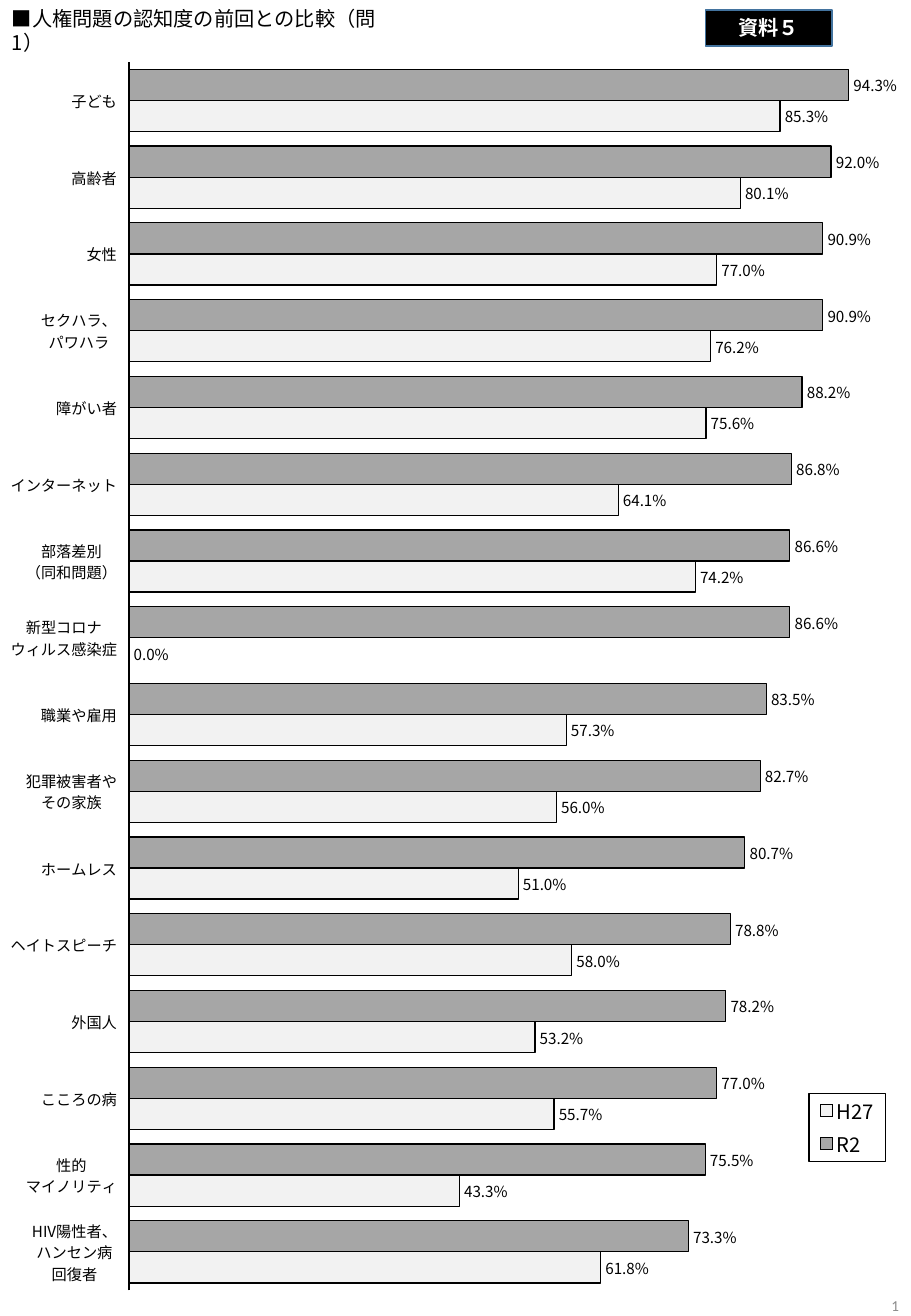
from lxml import etree
from pptx import Presentation
from pptx.chart.data import CategoryChartData
from pptx.dml.color import RGBColor
from pptx.enum.chart import XL_CHART_TYPE, XL_LABEL_POSITION, XL_LEGEND_POSITION, XL_TICK_LABEL_POSITION, XL_TICK_MARK
from pptx.enum.shapes import MSO_SHAPE
from pptx.enum.text import MSO_ANCHOR, PP_ALIGN
from pptx.oxml import parse_xml
from pptx.oxml.ns import nsdecls, qn
from pptx.util import Inches, Pt

BAR = XL_CHART_TYPE.BAR_CLUSTERED
OUTSIDE_END = XL_LABEL_POSITION.OUTSIDE_END
LEGEND_RIGHT = XL_LEGEND_POSITION.RIGHT
LABELS_LOW = XL_TICK_LABEL_POSITION.LOW
NO_TICKS = XL_TICK_MARK.NONE
RECTANGLE = MSO_SHAPE.RECTANGLE
TOP, MIDDLE = MSO_ANCHOR.TOP, MSO_ANCHOR.MIDDLE
LEFT, CENTER, RIGHT = PP_ALIGN.LEFT, PP_ALIGN.CENTER, PP_ALIGN.RIGHT
CJK = "Noto Sans CJK JP"
BLACK = "000000"


def rgb(value):
    return RGBColor.from_string(value)


def write(shape, text, align, anchor, color, **font_format):
    frame = shape.text_frame
    frame.word_wrap = True
    frame.vertical_anchor = anchor
    paragraph = frame.paragraphs[0]
    paragraph.alignment = align
    run = paragraph.add_run()
    run.text = text
    for key, value in font_format.items():
        setattr(run.font, key, value)
    run.font.color.rgb = rgb(color)


categories = [
    "子ども", "高齢者", "女性", "セクハラ、\nパワハラ", "障がい者", "インターネット",
    "部落差別\n（同和問題）", "新型コロナ\nウィルス感染症", "職業や雇用",
    "犯罪被害者や\nその家族", "ホームレス", "ヘイトスピーチ", "外国人", "こころの病",
    "性的\nマイノリティ", "HIV陽性者、\nハンセン病\n回復者",
]
surveys = [
    ("R2", "A6A6A6", [94.3, 92, 90.9, 90.9, 88.2, 86.8, 86.6, 86.6,
                      83.5, 82.7, 80.7, 78.8, 78.2, 77, 75.5, 73.3]),
    ("H27", "F2F2F2", [85.3, 80.1, 77, 76.2, 75.6, 64.1, 74.2, 0,
                       57.3, 56, 51, 58, 53.2, 55.7, 43.3, 61.8]),
]

presentation = Presentation()
presentation.slide_width = Inches(7.5)
presentation.slide_height = Inches(10.83)
slide = presentation.slides.add_slide(presentation.slide_layouts[6])

heading = slide.shapes.add_textbox(Inches(0), Inches(0), Inches(3.41), Inches(0.3))
write(heading, "■人権問題の認知度の前回との比較（問1）", LEFT, TOP, BLACK, size=Pt(12), name=CJK)

page_number = slide.shapes.add_textbox(Inches(5.81), Inches(10.64), Inches(1.69), Inches(0.2))
write(page_number, "1", RIGHT, MIDDLE, "8C8C8C", size=Pt(9), name="Calibri")

chart_data = CategoryChartData()
chart_data.categories = categories
for name, color, values in surveys:
    chart_data.add_series(name, values)
chart = slide.shapes.add_chart(
    BAR, Inches(0), Inches(0.3), Inches(7.5), Inches(10.53), chart_data).chart
chart.has_title = False
chart.has_legend = True
legend = chart.legend
legend.position = LEGEND_RIGHT
legend.include_in_layout = False

issue_axis = chart.category_axis
issue_axis.reverse_order = True
issue_axis.major_tick_mark = NO_TICKS
issue_axis.tick_label_position = LABELS_LOW
issue_axis.format.line.color.rgb = rgb(BLACK)
issue_axis.format.line.width = Pt(0.75)

percent_axis = chart.value_axis
percent_axis.minimum_scale = 0
percent_axis.maximum_scale = 100
percent_axis.has_major_gridlines = False
percent_axis.visible = False

plot = chart.plots[0]
plot.gap_width = 47
plot.overlap = 0
plot.vary_by_categories = False
fonts = [(chart.font, 10), (issue_axis.tick_labels.font, 9), (legend.font, 12)]
for series, (name, color, values) in zip(plot.series, surveys):
    series.invert_if_negative = False
    series.format.fill.solid()
    series.format.fill.fore_color.rgb = rgb(color)
    series.format.line.color.rgb = rgb(BLACK)
    series.format.line.width = Pt(0.75)
    labels = series.data_labels
    label_format = {"show_value": True, "position": OUTSIDE_END,
                    "number_format": '0.0"%"', "number_format_is_linked": False}
    for key, value in label_format.items():
        setattr(labels, key, value)
    fonts.append((labels.font, 9))
for font, size in fonts:
    font.size = Pt(size)
    font.name = CJK
    font.color.rgb = rgb(BLACK)

plot_area = chart.element.find(".//" + qn("c:plotArea"))
legend_element = chart.element.find(".//" + qn("c:legend"))
areas = [(plot_area, True, (0.1415, 0.02, 0.838, 0.96)),
         (legend_element, False, (0.888, 0.826, 0.084, 0.053))]
for area, inner, box in areas:
    for old_layout in area.findall(qn("c:layout")):
        area.remove(old_layout)
    layout = parse_xml(f"<c:layout {nsdecls('c')}><c:manualLayout/></c:layout>")
    settings = [("layoutTarget", "inner")] if inner else []
    settings += [("xMode", "edge"), ("yMode", "edge"), *zip("xywh", box)]
    for key, value in settings:
        etree.SubElement(layout[0], qn("c:" + key)).set("val", str(value))
    area.insert(0 if inner else 1, layout)

legend_element.find(qn("c:overlay")).addnext(parse_xml(
    f'<c:spPr {nsdecls("c", "a")}><a:solidFill><a:srgbClr val="FFFFFF"/></a:solidFill>'
    f'<a:ln w="9525"><a:solidFill><a:srgbClr val="{BLACK}"/></a:solidFill></a:ln></c:spPr>'))

handout_tag = slide.shapes.add_shape(
    RECTANGLE, Inches(5.81), Inches(0.08), Inches(1.04), Inches(0.3))
handout_tag.shadow.inherit = False
handout_tag.fill.solid()
handout_tag.fill.fore_color.rgb = rgb(BLACK)
handout_tag.line.color.rgb = rgb("43739E")
handout_tag.line.width = Pt(1)
write(handout_tag, "資料５", CENTER, MIDDLE, "FFFFFF", size=Pt(12), name="Calibri", bold=True)

presentation.save("out.pptx")
